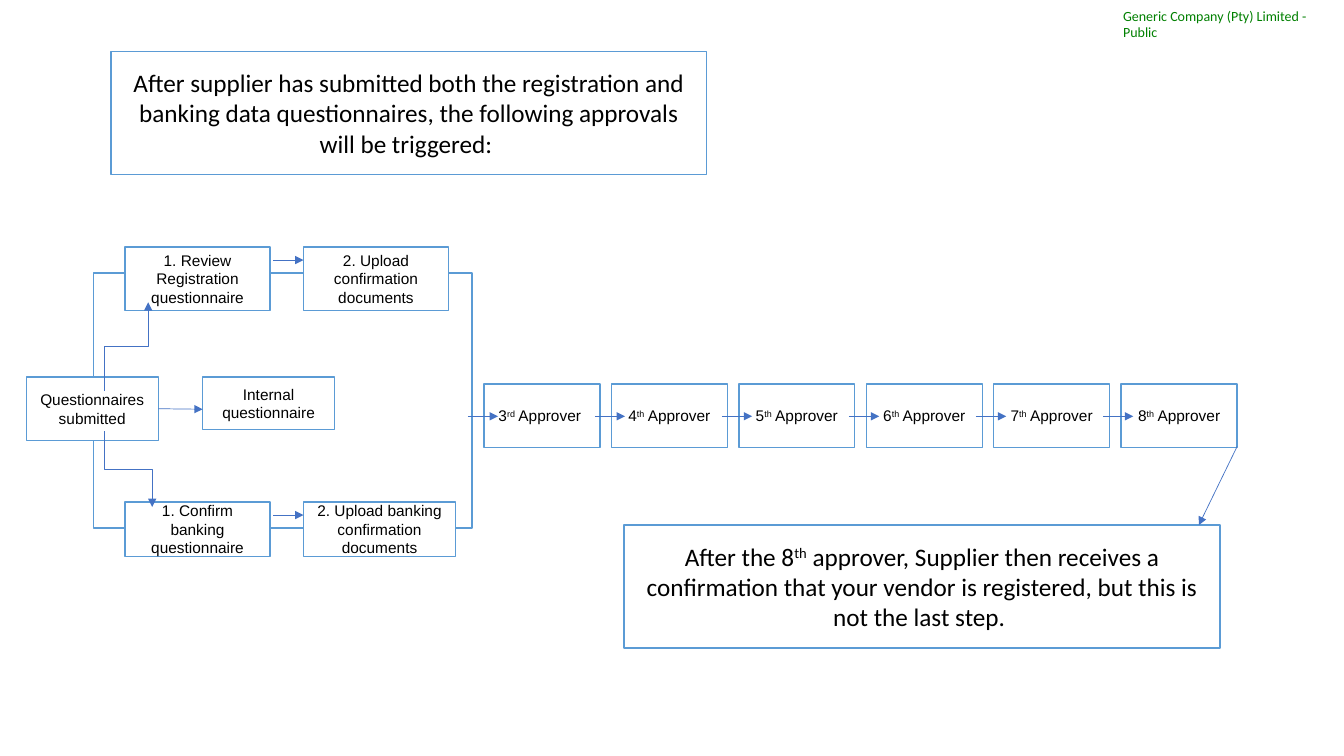
from lxml import etree
from pptx import Presentation
from pptx.dml.color import RGBColor
from pptx.enum import shapes, text
from pptx.oxml.ns import qn
from pptx.util import Inches, Pt

WHITE = RGBColor(0xFF, 0xFF, 0xFF)
BLACK = RGBColor(0, 0, 0)
GREEN = RGBColor(0, 0x80, 0)
BOX_BLUE = RGBColor(0x5B, 0x9B, 0xD5)
ARROW_BLUE = RGBColor(0x44, 0x72, 0xC4)


def style(p, font, size, color):
    p.font.name, p.font.size, p.font.color.rgb = font, Pt(size), color


def add_box(s, x, y, w, h, parts=(), font="Arial", size=11):
    """Outlined box; every second text part is superscript."""
    sp = s.shapes.add_shape(shapes.MSO_SHAPE.RECTANGLE,
                            Inches(x), Inches(y), Inches(w), Inches(h))
    sp.shadow.inherit = False
    sp.fill.solid()
    sp.fill.fore_color.rgb = WHITE
    sp.line.color.rgb = BOX_BLUE
    sp.line.width = Pt(1)
    tf = sp.text_frame
    tf.word_wrap = True
    tf.vertical_anchor = text.MSO_ANCHOR.MIDDLE
    p = tf.paragraphs[0]
    p.alignment = text.PP_ALIGN.CENTER
    style(p, font, size, BLACK)
    for i, part in enumerate(parts):
        r = p.add_run()
        r.text = part
        if i % 2:
            r.font._element.set("baseline", "30000")
    return sp


def add_arrow(s, x1, y1, x2, y2, kind=shapes.MSO_CONNECTOR.STRAIGHT):
    c = s.shapes.add_connector(kind, Inches(x1), Inches(y1), Inches(x2), Inches(y2))
    c.line.color.rgb = ARROW_BLUE
    c.line.width = Pt(0.5)
    etree.SubElement(c.line._get_or_add_ln(), qn("a:tailEnd"), type="triangle")
    etree.SubElement(c._element.spPr, qn("a:effectLst"))
    return c


def add_vertical_elbow(s, x1, y1, x2, y2):
    """Elbow arrow that leaves and arrives vertically, heading right."""
    cx, cy = (x1 + x2) / 2, (y1 + y2) / 2
    half_w, half_h = abs(y2 - y1) / 2, (x2 - x1) / 2
    down = y2 > y1
    if down:
        half_h = -half_h
    c = add_arrow(s, cx + half_w, cy + half_h, cx - half_w, cy - half_h,
                  shapes.MSO_CONNECTOR.ELBOW)
    return c, 270 if down else 90


def rotate(c, degrees):
    c._element.spPr.find(qn("a:xfrm")).set("rot", str(degrees * 60000))


def add_header(s):
    tb = s.shapes.add_textbox(Inches(11.14), Inches(0.07), Inches(2.16), Inches(0.17))
    tf = tb.text_frame
    tf.margin_left = tf.margin_right = tf.margin_top = tf.margin_bottom = 0
    p = tf.paragraphs[0]
    p.text = "Generic Company (Pty) Limited - Public"
    style(p, "Calibri", 10, GREEN)


def main():
    prs = Presentation()
    prs.slide_width, prs.slide_height = Inches(13.33), Inches(7.5)
    s = prs.slides.add_slide(prs.slide_layouts[6])
    add_header(s)

    # Parallel review steps on a surrounding frame
    add_box(s, 0.93, 2.71, 3.75, 2.53)
    add_box(s, 1.24, 2.45, 1.44, 0.63, ["1. Review Registration questionnaire"])
    add_box(s, 3.01, 2.45, 1.44, 0.63, ["2. Upload confirmation documents"])
    add_box(s, 1.24, 4.98, 1.44, 0.54, ["1. Confirm banking questionnaire"])
    add_box(s, 3.01, 4.98, 1.51, 0.54, ["2. Upload banking confirmation documents"])
    add_box(s, 2.01, 3.74, 1.31, 0.52, ["Internal questionnaire"])
    submitted = add_box(s, 0.26, 3.74, 1.31, 0.63, ["Questionnaires submitted"])

    # Approver chain
    ordinals = ["rd"] + ["th"] * 5
    for i, suffix in enumerate(ordinals):
        add_box(s, 4.8 + 1.264 * i, 3.81, 1.15, 0.63,
                [str(i + 3), suffix, " Approver" if i else " Approver "])

    # Explanations
    add_box(s, 6.19, 5.21, 5.91, 1.22,
            ["After the 8", "th", " approver, Supplier then receives a confirmation "
             "that your vendor is registered, but this is not the last step. "],
            "Calibri", 18)
    add_box(s, 1.1, 0.51, 5.91, 1.22,
            ["After supplier has submitted both the registration and banking data "
             "questionnaires, the following approvals will be triggered: "],
            "Calibri", 18)

    # Arrows
    add_arrow(s, 12.27, 4.43, 11.89, 5.21)
    add_arrow(s, 1.57, 4.06, 2.01, 4.06).begin_connect(submitted, 3)
    for y in (5.11, 2.58):
        add_arrow(s, 2.71, y, 3.01, y)
    for y1, x2, y2 in ((4.28, 1.51, 5.03), (3.88, 1.47, 3)):
        rotate(*add_vertical_elbow(s, 1.04, y1, x2, y2))
    for i in range(len(ordinals)):
        x = 4.64 + 1.26 * i
        add_arrow(s, x, 4.13, x + 0.3, 4.13)

    prs.save("out.pptx")


if __name__ == "__main__":
    main()
